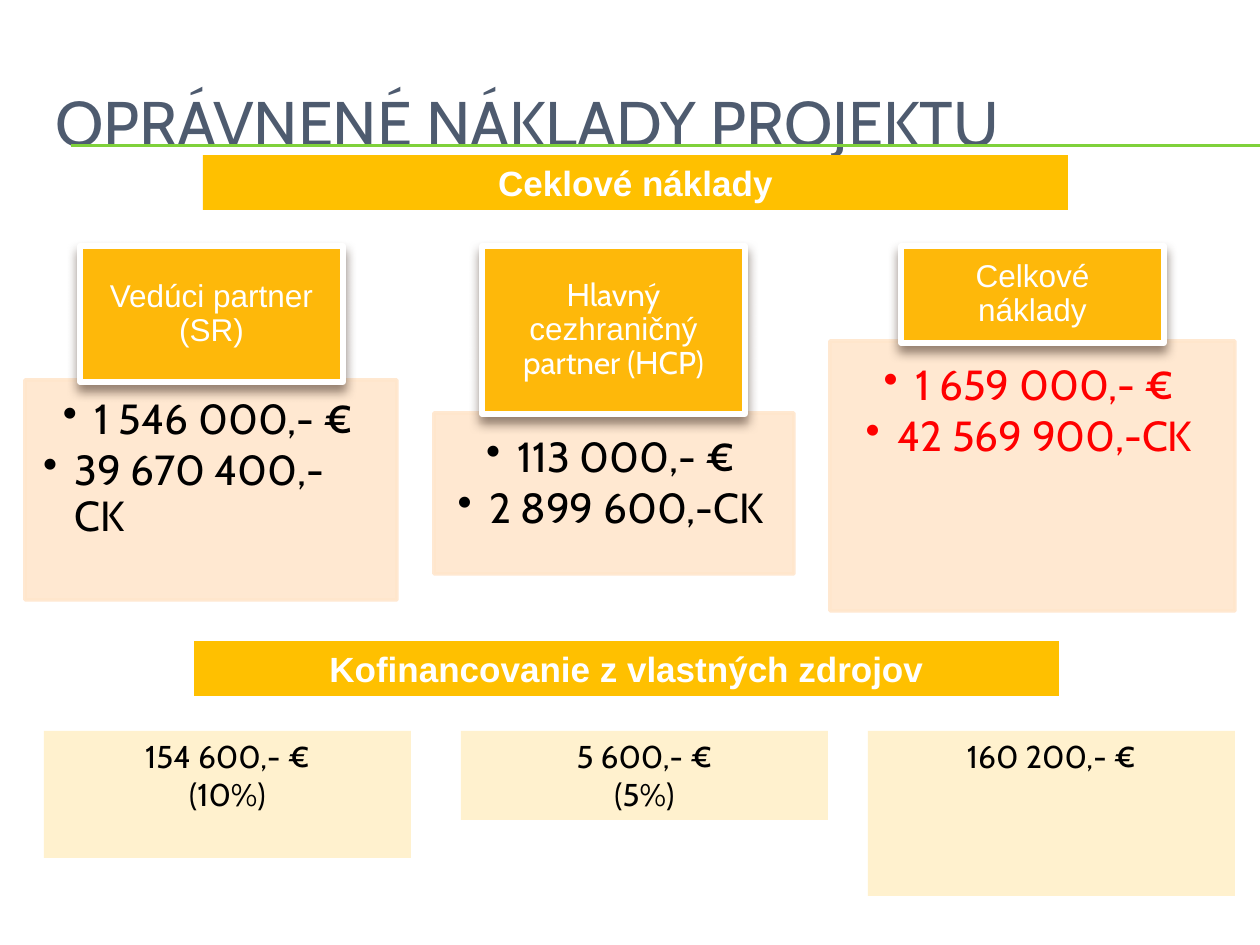
from typing import NamedTuple

from lxml.etree import SubElement
from pptx import Presentation
from pptx.dml.color import RGBColor
from pptx.enum.shapes import MSO_CONNECTOR, MSO_SHAPE
from pptx.enum.text import MSO_ANCHOR, PP_ALIGN
from pptx.oxml import parse_xml
from pptx.oxml.ns import nsdecls, qn
from pptx.util import Pt

PX = 914400 / 126
GREEN = RGBColor(0x7F, 0xD1, 0x3B)
SLATE = RGBColor(0x4E, 0x5B, 0x6F)
GOLD = RGBColor(0xFF, 0xC0, 0x00)
AMBER = RGBColor(0xFE, 0xB8, 0x0A)
PEACH = RGBColor(0xFF, 0xE6, 0xCC)
CREAM = RGBColor(0xFF, 0xF1, 0xCE)
WHITE = RGBColor(0xFF, 0xFF, 0xFF)
BLACK = RGBColor(0x00, 0x00, 0x00)
RED = RGBColor(0xFF, 0x00, 0x00)
HEAD_TOP = 246
HEAD_W = 263
BAR_W, BAR_H = 865, 55
SHARE_W = 367


class Box(NamedTuple):
    x: int
    y: int
    w: int
    h: int


class Run(NamedTuple):
    text: str
    font: str = "Cabin"


class Column(NamedTuple):
    head_x: int
    head_h: int
    head: list[Run]
    panel: Box
    insets: tuple[int, int, int, int]
    costs: list[str]
    aligns: list[PP_ALIGN]
    color: RGBColor
    share: Box
    share_lines: list[str]


class Bar(NamedTuple):
    x: int
    y: int
    text: str


CENTERED = [PP_ALIGN.CENTER] * 2
COLUMNS = [
    Column(80, 136, [Run("Vedúci partner (SR)", "Arial")],
           Box(25, 380, 372, 220), (18, 18, 24, 26),
           ["1 546 000,- €", "39 670 400,-CK"], [PP_ALIGN.CENTER, PP_ALIGN.LEFT],
           BLACK, Box(44, 731, SHARE_W, 127), ["154 600,- €", "(10%)"]),
    Column(482, 168, [Run("Hlavný "), Run("cezhraničný", "Arial"), Run(" partner (HCP)")],
           Box(434, 413, 360, 161), (23, 23, 30, 34),
           ["113 000,- €", "2 899 600,-CK"], CENTERED,
           BLACK, Box(461, 731, SHARE_W, 89), ["5 600,- €", "(5%)"]),
    Column(901, 97, [Run("Celkové náklady", "Arial")],
           Box(830, 341, 405, 270), (23, 23, 30, 34),
           ["1 659 000,- €", "42 569 900,-CK"], CENTERED,
           RED, Box(868, 731, SHARE_W, 165), ["160 200,- €"]),
]
BARS = [Bar(203, 155, "Ceklové náklady"),
        Bar(194, 641, "Kofinancovanie z vlastných zdrojov")]


def emu(px: int) -> int:
    return round(px * PX)


def apply(obj, values: dict) -> None:
    for name, value in values.items():
        setattr(obj, name, value)


def place(sp, box: Box) -> None:
    apply(sp, dict(zip(("left", "top", "width", "height"), map(emu, box))))


def set_frame(tf, anchor: MSO_ANCHOR, insets: tuple[int, int, int, int] = (13, 6, 13, 6)) -> None:
    sides = ("margin_left", "margin_top", "margin_right", "margin_bottom")
    apply(tf, dict(zip(sides, map(emu, insets))))
    apply(tf, {"word_wrap": True, "vertical_anchor": anchor})


def add_run(p, run: Run, size: int, color: RGBColor, bold: bool = False) -> None:
    r = p.add_run()
    r.text = run.text
    apply(r.font, {"name": run.font, "size": Pt(size), "bold": bold})
    r.font.color.rgb = color


def add_lines(tf, lines: list[list[Run]], size: int, color: RGBColor, bold: bool = False) -> None:
    for i, runs in enumerate(lines):
        p = tf.add_paragraph() if i else tf.paragraphs[0]
        p.alignment = PP_ALIGN.CENTER
        for run in runs:
            add_run(p, run, size, color, bold)


def add_rect(s, box: Box, fill: RGBColor):
    sp = s.shapes.add_shape(MSO_SHAPE.RECTANGLE, *map(emu, box))
    sp.shadow.inherit = False
    sp.fill.solid()
    sp.fill.fore_color.rgb = fill
    sp.line.fill.background()
    return sp


def set_line(sp, color: RGBColor, width: float) -> None:
    sp.line.color.rgb = color
    sp.line.width = Pt(width)


def add_shadow(sp) -> None:
    effects = sp._element.spPr.find(qn("a:effectLst"))
    effects.append(parse_xml(
        f'<a:outerShdw {nsdecls("a")} blurRad="76200" dist="50800" dir="5400000" '
        'rotWithShape="0"><a:srgbClr val="4E3B30"><a:alpha val="60000"/>'
        '</a:srgbClr></a:outerShdw>'))


def add_bullet(p) -> None:
    pPr = p._p.get_or_add_pPr()
    pPr.set("marL", "228600")
    pPr.set("indent", "-228600")
    SubElement(pPr, qn("a:buChar")).set("char", "•")


def add_rule(s, y: int) -> None:
    line = s.shapes.add_connector(MSO_CONNECTOR.STRAIGHT, emu(71), emu(y), emu(1260), emu(y))
    set_line(line, GREEN, 0.75)
    SubElement(line._element.spPr, qn("a:effectLst"))


def add_title(s, text: str) -> None:
    sp = s.shapes.title
    place(sp, Box(42, 63, 1197, 116))
    set_frame(sp.text_frame, MSO_ANCHOR.MIDDLE)
    p = sp.text_frame.paragraphs[0]
    p.alignment = PP_ALIGN.LEFT
    add_run(p, Run(text), 36, SLATE)


def add_bar(s, bar: Bar) -> None:
    sp = add_rect(s, Box(bar.x, bar.y, BAR_W, BAR_H), GOLD)
    set_frame(sp.text_frame, MSO_ANCHOR.TOP)
    add_lines(sp.text_frame, [[Run(bar.text, "Arial")]], 20, WHITE, True)


def add_panel(s, col: Column) -> None:
    sp = add_rect(s, col.panel, PEACH)
    set_line(sp, PEACH, 2)
    for color in sp._element.spPr.iter(qn("a:srgbClr")):
        SubElement(color, qn("a:alpha")).set("val", "90000")
    tf = sp.text_frame
    set_frame(tf, MSO_ANCHOR.TOP, col.insets)
    add_lines(tf, [[Run(cost)] for cost in col.costs], 24, col.color)
    for p, align in zip(tf.paragraphs, col.aligns):
        apply(p, {"alignment": align, "line_spacing": 0.9, "space_after": Pt(3.6)})
        add_bullet(p)


def add_head(s, col: Column) -> None:
    sp = add_rect(s, Box(col.head_x, HEAD_TOP, HEAD_W, col.head_h), AMBER)
    set_line(sp, WHITE, 3)
    add_shadow(sp)
    set_frame(sp.text_frame, MSO_ANCHOR.MIDDLE, (18, 10, 18, 10))
    add_lines(sp.text_frame, [col.head], 18, WHITE)
    sp.text_frame.paragraphs[0].line_spacing = 0.9


def add_share(s, col: Column) -> None:
    sp = add_rect(s, col.share, CREAM)
    set_frame(sp.text_frame, MSO_ANCHOR.TOP)
    add_lines(sp.text_frame, [[Run(line)] for line in col.share_lines], 18, BLACK)


def main() -> None:
    prs = Presentation()
    apply(prs, {"slide_width": emu(1260), "slide_height": emu(945)})
    s = prs.slides.add_slide(prs.slide_layouts[5])
    for y in (145, 146):
        add_rule(s, y)
    add_title(s, "OPRÁVNENÉ NÁKLADY PROJEKTU")
    for col in COLUMNS:
        add_panel(s, col)
        add_head(s, col)
        add_share(s, col)
    for bar in BARS:
        add_bar(s, bar)
    prs.save("out.pptx")


if __name__ == "__main__":
    main()
